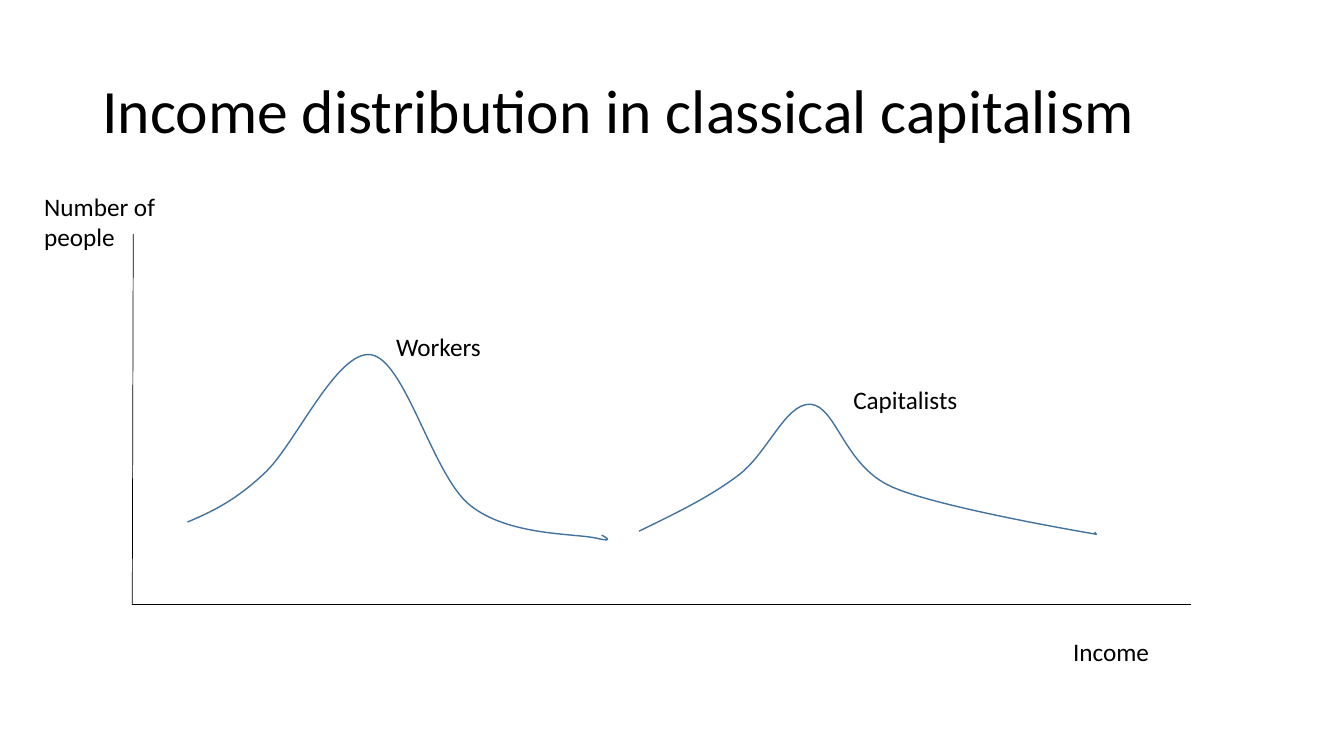
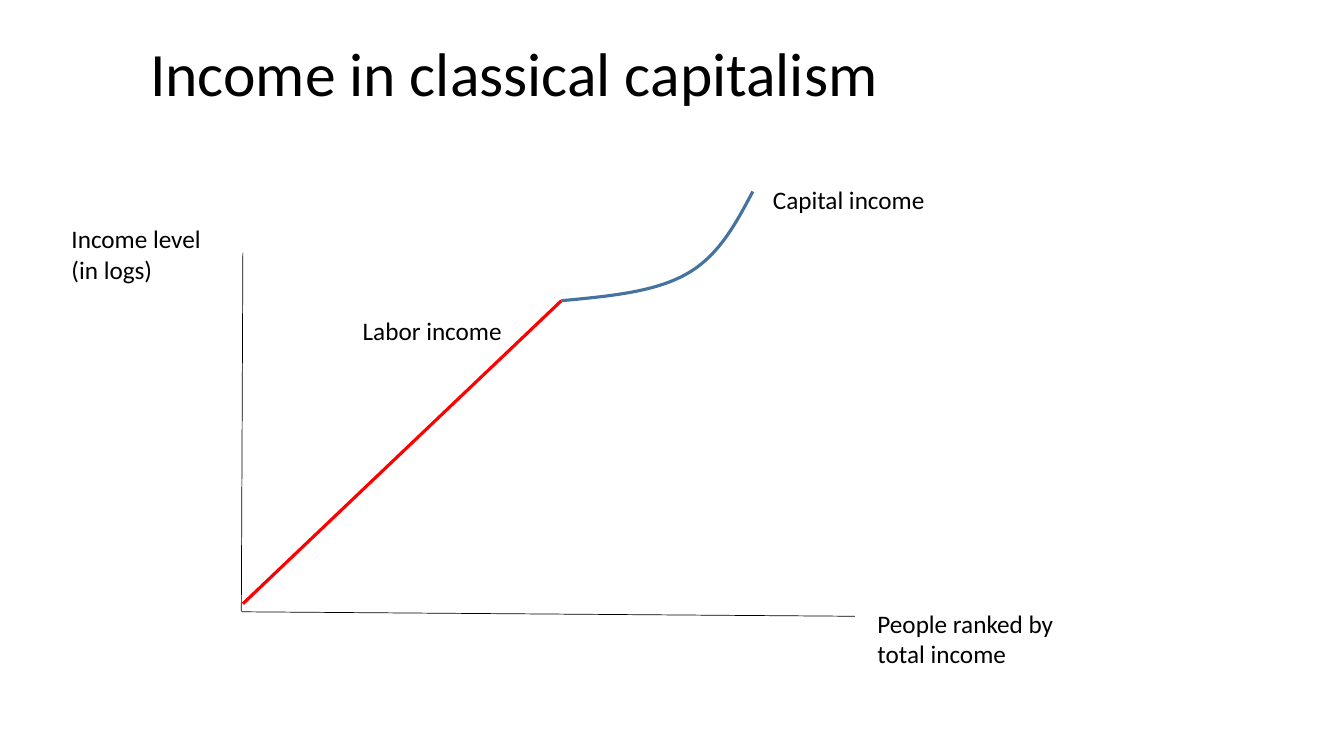
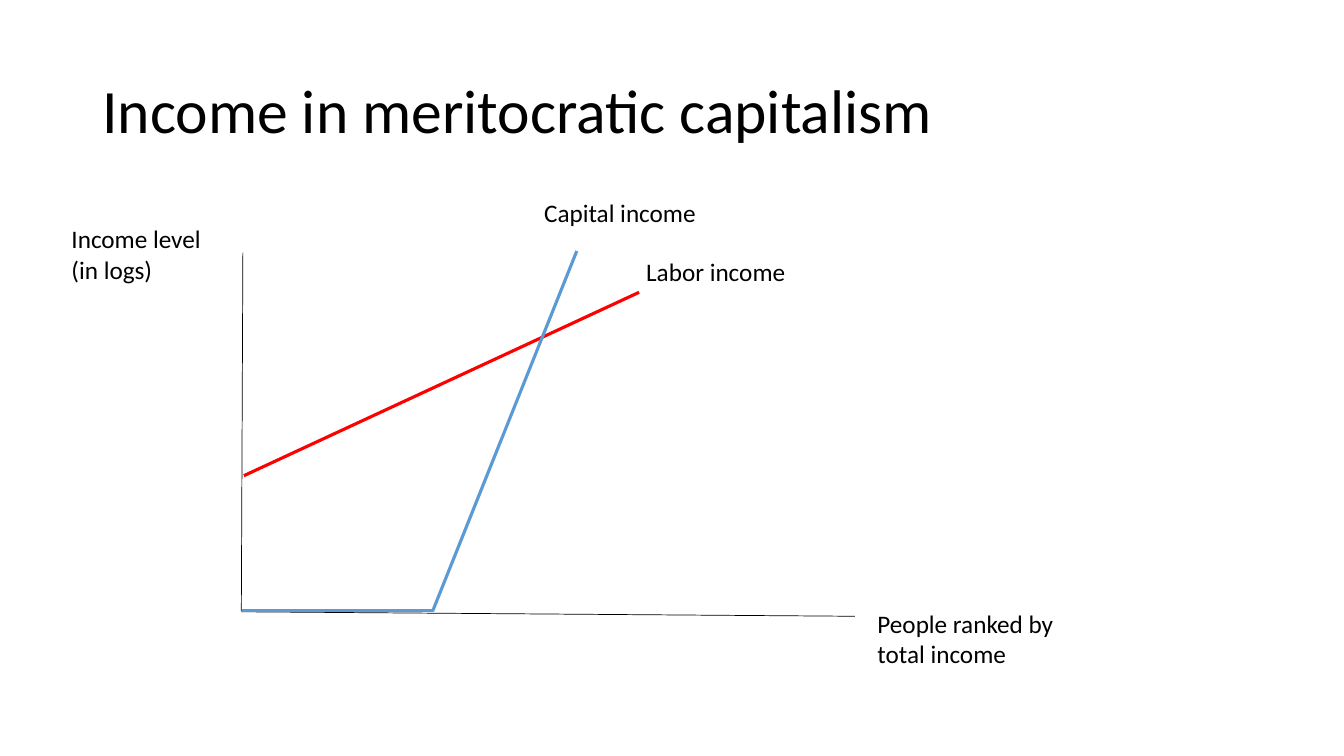
"""Build three slides of income curves under different kinds of capitalism."""
import lxml.etree
import pptx
import pptx.dml.color
import pptx.enum.shapes
import pptx.enum.text
import pptx.oxml
import pptx.oxml.ns
import pptx.util

BLACK, RED, BLUE, STEEL = "000000", "FF0000", "5B9BD5", "43739E"
FONT = "Calibri"
SLIDE_SIZE = (960, 540)
TITLE_BOX = (66, 29, 828, 104.4)
AXIS_WIDTH, SERIES_WIDTH, DISTRIBUTION_WIDTH = 0.5, 2.25, 1

TITLE_FRAME = {"vertical_anchor": pptx.enum.text.MSO_ANCHOR.MIDDLE, "word_wrap": True}
TITLE_PARA = {"alignment": pptx.enum.text.PP_ALIGN.LEFT, "line_spacing": 0.9}
LABEL_FRAME = {"word_wrap": True,
               "auto_size": pptx.enum.text.MSO_AUTO_SIZE.SHAPE_TO_FIT_TEXT}
LABEL_PARA = {"alignment": pptx.enum.text.PP_ALIGN.LEFT}

INCOME_AXES = [
    ("line", (173.5, 180.5), (172.4, 436.5), BLACK, AXIS_WIDTH),
    ("line", (172.4, 437), (610.6, 440.2), BLACK, AXIS_WIDTH),
]
INCOME_AXIS_LABELS = [
    ("label", "People ranked by total income", (619.7, 431, 170.6, 51)),
    ("label", "Income level (in logs)", (44, 156.2, 112.3, 51)),
]

WORKERS = {
    "box": (133.9, 253.4, 300.2, 132.5),
    "start": (133.9, 373),
    "bends": [
        ((150.5, 365.8), (167, 358.6), (188.6, 338.4)),
        ((210.2, 319), (240.5, 249.8), (265, 253.4)),
        ((289.4, 257), (308.9, 339.1), (335.5, 360.7)),
        ((362.9, 383), (410.4, 380.9), (426.2, 384.5)),
        ((441.4, 388.1), (429.8, 382.3), (429.8, 382.3)),
    ],
    "tail": [],
}
CAPITALISTS = {
    "box": (456.5, 288.7, 326.6, 92.9),
    "start": (456.5, 379.4),
    "bends": [
        ((481.7, 367.2), (506.9, 355), (527, 339.8)),
        ((547.9, 324.7), (560.9, 288), (578.9, 288.7)),
        ((597.6, 290.2), (602.6, 332.6), (637.2, 347.8)),
        ((671, 362.9), (783.1, 381.6), (783.1, 381.6)),
    ],
    "tail": [(783.1, 381.6), (782, 380.2)],
}
CAPITAL_INCOME = {
    "box": (401, 136.8, 136.8, 78),
    "start": (401, 214.8),
    "bends": [
        ((434.2, 211.7), (467.3, 208.8), (490.3, 195.8)),
        ((513.4, 182.9), (525.6, 159.8), (537.8, 136.8)),
    ],
    "tail": [],
}

SLIDES = [
    {
        "title": "Income distribution in classical capitalism",
        "title_box": TITLE_BOX,
        "parts": [
            ("line", (94.5, 432), (95.2, 167), BLACK, AXIS_WIDTH),
            ("curve", WORKERS, STEEL, DISTRIBUTION_WIDTH),
            ("curve", CAPITALISTS, STEEL, DISTRIBUTION_WIDTH),
            ("label", "Workers", (275.8, 233.2, 158.4, 29)),
            ("label", "Capitalists", (602.4, 270.7, 180.7, 29)),
            ("line", (94.5, 432), (851, 432), BLACK, AXIS_WIDTH),
            ("label", "Income", (759.4, 451.2, 143.3, 29)),
            ("label", "Number of people", (24.5, 133.2, 126, 51)),
        ],
    },
    {
        "title": "Income in classical capitalism",
        "title_box": (100, 9.4, 828, 90),
        "parts": [
            *INCOME_AXES,
            ("label", "Labor income", (252, 221.8, 172, 29)),
            ("label", "Capital income", (545, 128, 149, 29)),
            *INCOME_AXIS_LABELS,
            ("line", (173.5, 431.3), (401, 214.8), RED, SERIES_WIDTH),
            ("curve", CAPITAL_INCOME, STEEL, SERIES_WIDTH),
        ],
    },
    {
        "title": "Income in meritocratic capitalism",
        "title_box": TITLE_BOX,
        "parts": [
            *INCOME_AXES,
            ("line", (174.2, 339.8), (456.5, 208.8), RED, SERIES_WIDTH),
            ("label", "Labor income", (454.5, 179.3, 172, 29)),
            ("label", "Capital income", (381.6, 137.5, 149, 29)),
            *INCOME_AXIS_LABELS,
            ("line", (309, 436.7), (412, 179.3), BLUE, SERIES_WIDTH),
            ("line", (172.8, 436.3), (309, 436.3), BLUE, SERIES_WIDTH),
        ],
    },
]


def color(value):
    return pptx.dml.color.RGBColor.from_string(value)


def points(values):
    return [pptx.util.Pt(value) for value in values]


def apply_format(target, values):
    for name, value in values.items():
        setattr(target, name, value)


def write_text(shape, text, size, frame_format, para_format):
    frame = shape.text_frame
    apply_format(frame, frame_format)
    para = frame.paragraphs[0]
    apply_format(para, para_format)
    span = para.add_run()
    span.text = text
    apply_format(span.font, {"name": FONT, "size": pptx.util.Pt(size)})
    span.font.color.rgb = color(BLACK)


def style_line(shape, line_color, width):
    shape.line.color.rgb = color(line_color)
    shape.line.width = pptx.util.Pt(width)


def add_title(page, text, place):
    title = page.shapes.title
    apply_format(title, dict(zip(("left", "top", "width", "height"), points(place))))
    write_text(title, text, 44, TITLE_FRAME, TITLE_PARA)


def add_label(page, text, place):
    box = page.shapes.add_textbox(*points(place))
    write_text(box, text, 18, LABEL_FRAME, LABEL_PARA)


def add_line(page, start, end, line_color, width):
    line = page.shapes.add_connector(
        pptx.enum.shapes.MSO_CONNECTOR.STRAIGHT, *points(start + end))
    style_line(line, line_color, width)
    properties = line._element.find(pptx.oxml.ns.qn("p:spPr"))
    properties.append(pptx.oxml.parse_xml(
        f'<a:effectLst {pptx.oxml.ns.nsdecls("a")}/>'))


def add_command(outline, tag, vertices, origin):
    command = lxml.etree.SubElement(outline, pptx.oxml.ns.qn(tag))
    for vertex in vertices:
        x, y = (value - base for value, base in zip(points(vertex), origin))
        lxml.etree.SubElement(command, pptx.oxml.ns.qn("a:pt"), x=str(x), y=str(y))


def add_curve(page, course, line_color, width):
    left, top, box_width, box_height = points(course["box"])
    builder = page.shapes.build_freeform(left, top)
    builder.add_line_segments([(left + box_width, top + box_height)], close=False)
    curve = builder.convert_to_shape()
    outline = next(curve._element.iter(pptx.oxml.ns.qn("a:path")))
    for command in list(outline):
        outline.remove(command)
    commands = [("a:moveTo", [course["start"]])]
    commands += [("a:cubicBezTo", bend) for bend in course["bends"]]
    commands += [("a:lnTo", [vertex]) for vertex in course["tail"]]
    for tag, vertices in commands:
        add_command(outline, tag, vertices, (left, top))
    curve.shadow.inherit = False
    curve.fill.background()
    style_line(curve, line_color, width)


def main():
    deck = pptx.Presentation()
    deck.slide_width, deck.slide_height = points(SLIDE_SIZE)
    title_only = deck.slide_layouts.get_by_name("Title Only")
    drawers = {"line": add_line, "curve": add_curve, "label": add_label}
    for content in SLIDES:
        page = deck.slides.add_slide(title_only)
        add_title(page, content["title"], content["title_box"])
        for kind, *details in content["parts"]:
            drawers[kind](page, *details)
    deck.save("out.pptx")


if __name__ == "__main__":
    main()
